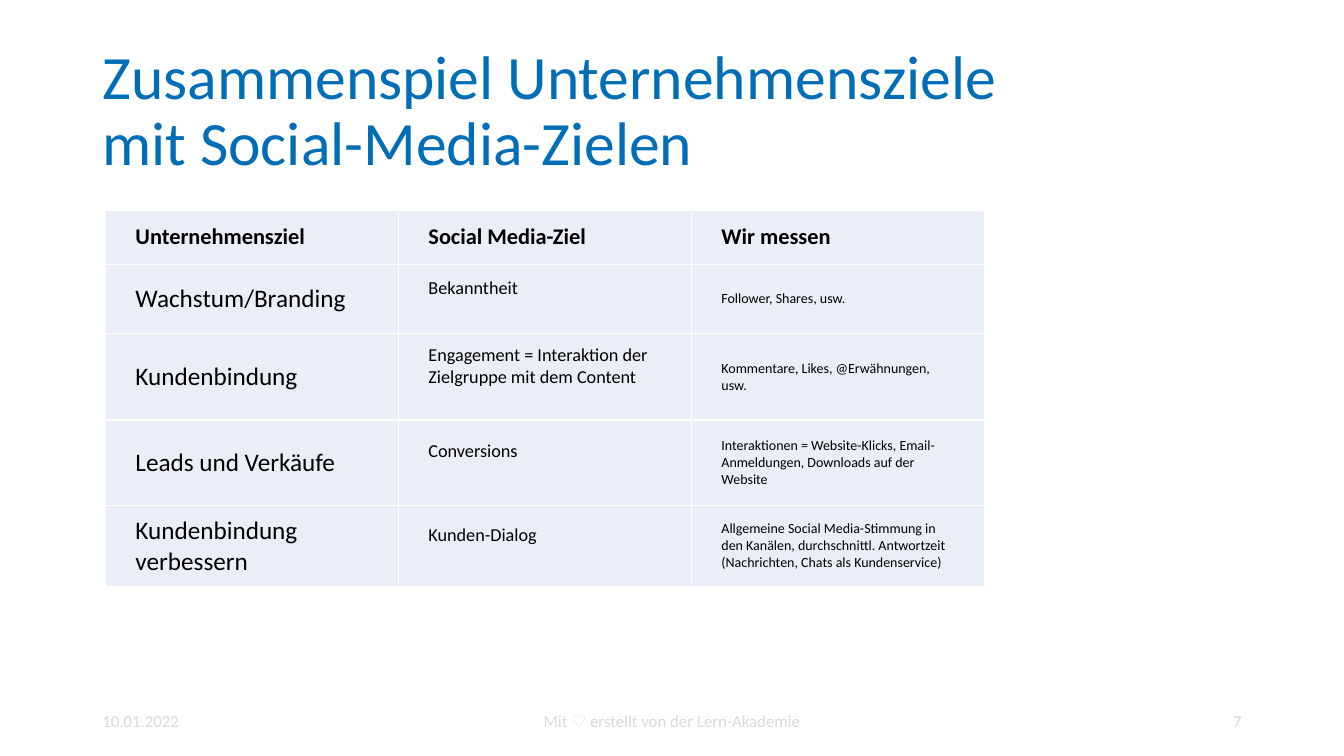
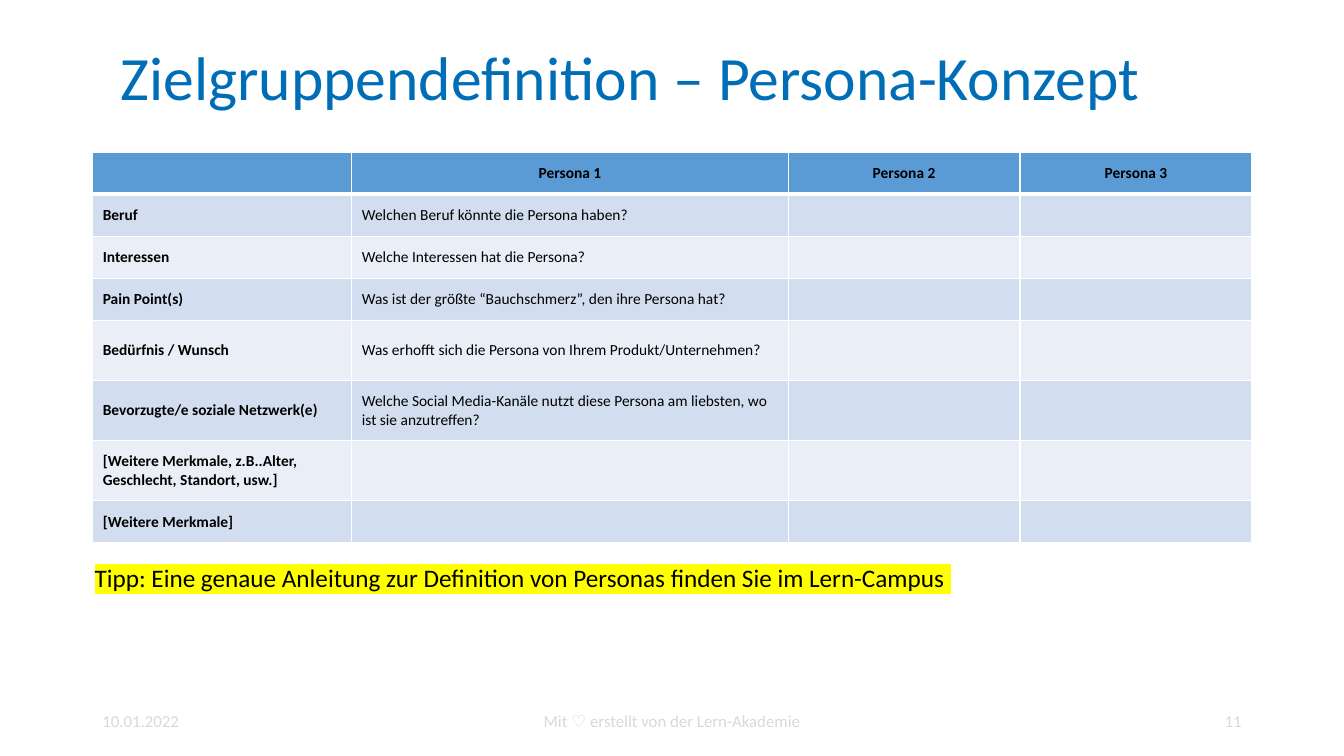
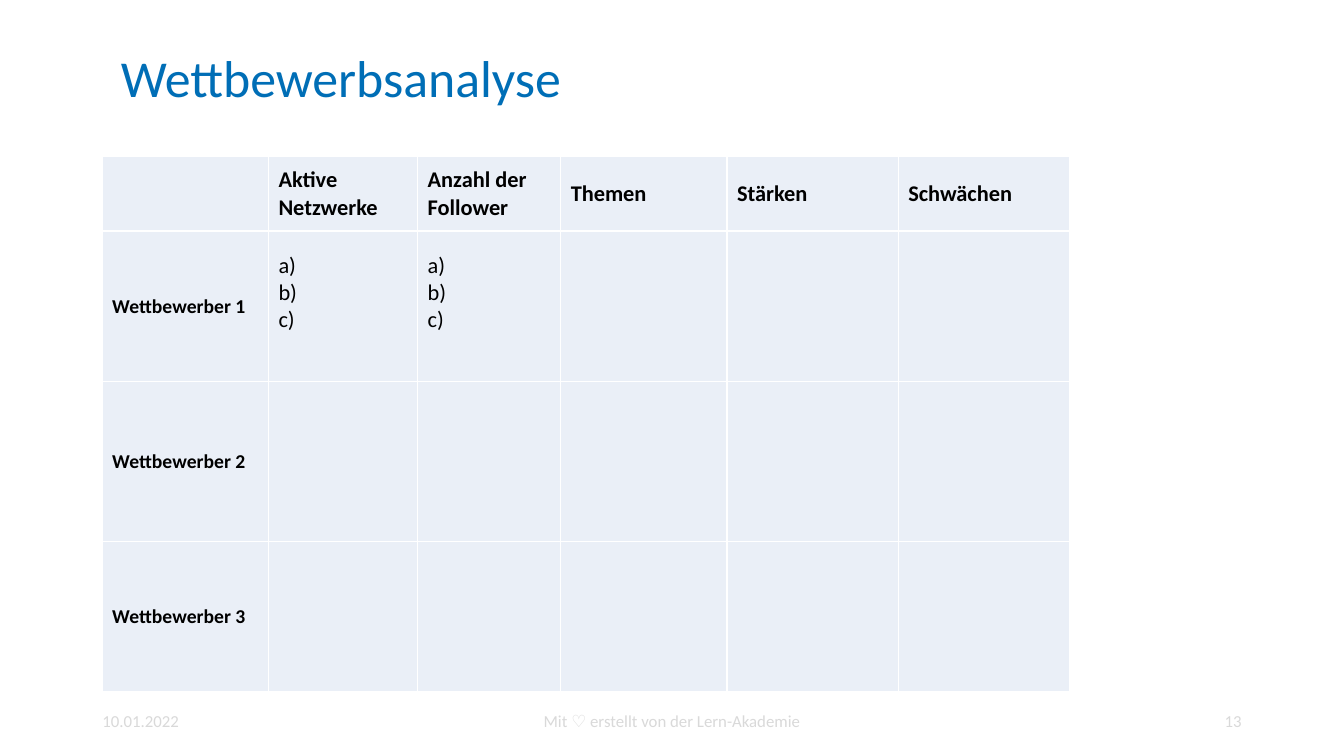
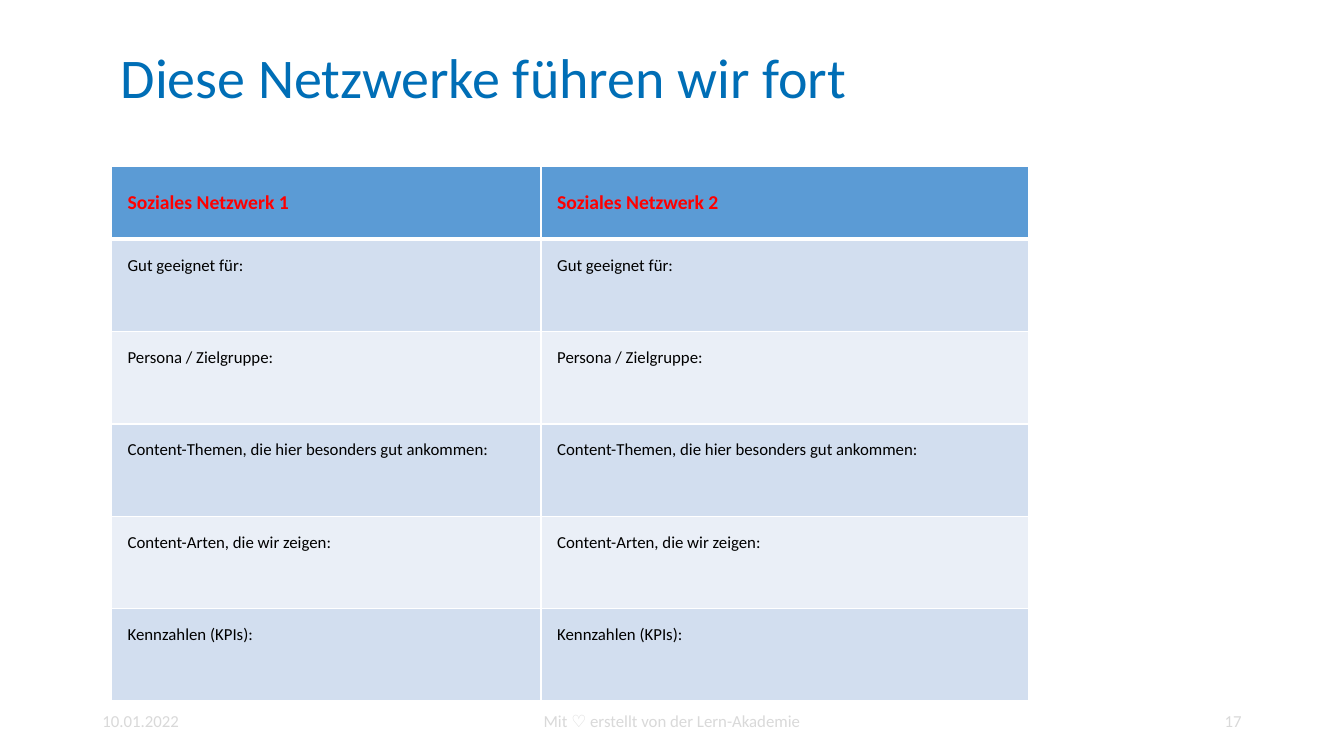
from dataclasses import dataclass, replace

from lxml.etree import SubElement
from pptx import Presentation
from pptx.dml.color import RGBColor
from pptx.enum.text import MSO_ANCHOR as Anchor, PP_ALIGN as Align
from pptx.oxml.ns import qn
from pptx.util import Emu, Inches, Pt

BLUE, HEAD, DARK, PALE = "006EB6", "5B9BD5", "D2DEEF", "EAEFF7"
BLACK, WHITE, GREY, RED, GOLD = "000000", "FFFFFF", "D9D9D9", "FF0000", "FFFF00"
FONT = "Calibri"


def paint(code):
    return RGBColor.from_string(code)


@dataclass
class Look:
    size: float
    bold: bool = False
    color: str = BLACK
    align: Align = Align.LEFT
    anchor: Anchor = Anchor.MIDDLE
    side: float = 0.1
    top: float = 0.1
    foot: float = 0.1
    lead: float = 1.0


class Deck:
    def __init__(self):
        self.file = Presentation()
        self.file.slide_width, self.file.slide_height = Inches(13.33), Inches(7.5)
        self.slide = None

    def box(self, at):
        wide, high = self.file.slide_width, self.file.slide_height
        return [Emu(int(part * full / 100)) for part, full in zip(at, (wide, high, wide, high))]

    def style(self, frame, look):
        for para in frame.paragraphs:
            para.alignment = look.align
            para.line_spacing = look.lead
            for run in para.runs:
                font = run.font
                font.name, font.size, font.bold = FONT, Pt(look.size), look.bold
                font.color.rgb = paint(look.color)

    def text(self, words, at, look):
        frame = self.slide.shapes.add_textbox(*self.box(at)).text_frame
        frame.word_wrap = True
        frame.vertical_anchor = look.anchor
        frame.text = words
        self.style(frame, look)
        return frame

    def page(self, title, number, size=44, at=(8.25, 2.53, 83.5, 16.27)):
        self.slide = self.file.slides.add_slide(self.file.slide_layouts[6])
        self.text(title, at, Look(size, color=BLUE, lead=0.9))
        feet = (
            ("10.01.2022", 6.88, 22.5, Align.LEFT),
            ("Mit ♡ erstellt von der Lern-Akademie", 33.13, 33.75, Align.CENTER),
            (str(number), 70.63, 22.5, Align.RIGHT),
        )
        for words, left, wide, align in feet:
            self.text(words, (left, 92.67, wide, 5.33), Look(12, color=GREY, align=align))

    def mark(self, frame, code):
        for run in frame.paragraphs[0].runs:
            props = run.font._element
            light = SubElement(props, qn("a:highlight"))
            SubElement(light, qn("a:srgbClr")).set("val", code)
            props.find(qn("a:solidFill")).addnext(light)

    def edge(self, cell, widths):
        props = cell._tc.get_or_add_tcPr()
        for side, width in zip("LRTB", widths):
            line = SubElement(props, qn(f"a:ln{side}"), w=str(Pt(width)))
            fill = SubElement(line, qn("a:solidFill"))
            SubElement(fill, qn("a:srgbClr")).set("val", WHITE)

    def table(self, at, cols, rows, cells, pick, band=False):
        left, top, wide, high = self.box(at)
        grid = self.slide.shapes.add_table(len(rows), len(cols), left, top, wide, high).table
        grid.first_row = grid.horz_banding = False
        for col, share in zip(grid.columns, cols):
            col.width = Emu(int(wide * share / sum(cols)))
        for row, share in zip(grid.rows, rows):
            row.height = Emu(int(high * share / sum(rows)))
        for r, line in enumerate(cells):
            tone = (HEAD if r == 0 else DARK if r % 2 else PALE) if band else PALE
            for c, words in enumerate(line):
                cell = grid.cell(r, c)
                self.edge(cell, (1, 1, 3 if band and r == 1 else 1, 3 if band and r == 0 else 1))
                cell.fill.solid()
                cell.fill.fore_color.rgb = paint(tone)
                if words:
                    self.fill(cell, words, pick(r, c))

    def fill(self, cell, words, look):
        cell.margin_left = cell.margin_right = Inches(look.side)
        cell.margin_top, cell.margin_bottom = Inches(look.top), Inches(look.foot)
        cell.vertical_anchor = look.anchor
        cell.text_frame.text = words
        self.style(cell.text_frame, look)


def goals(deck):
    deck.page("Zusammenspiel Unternehmensziele \vmit Social-Media-Zielen", 7,
              at=(6.88, 5.33, 86.25, 19.07))
    head = Look(16, bold=True, side=0.3)
    body = (Look(18, side=0.3), Look(13, side=0.3, foot=0.32), Look(10, side=0.3))
    cells = (
        ("Unternehmensziel", "Social Media-Ziel", "Wir messen"),
        ("Wachstum/Branding", "Bekanntheit", "Follower, Shares, usw."),
        ("Kundenbindung", "Engagement = Interaktion der Zielgruppe mit dem Content",
         "Kommentare, Likes, @Erwähnungen, usw."),
        ("Leads und Verkäufe", "Conversions",
         "Interaktionen = Website-Klicks, Email-Anmeldungen, Downloads auf der Website"),
        ("Kundenbindung verbessern", "Kunden-Dialog",
         "Allgemeine Social Media-Stimmung in den Kanälen, durchschnittl. Antwortzeit "
         "(Nachrichten, Chats als Kundenservice)"),
    )
    deck.table((7.83, 27.8, 65.4, 49.75), (1, 1, 1), (54, 69, 85, 85, 81), cells,
               lambda r, c: body[c] if r else head)


def persona(deck):
    deck.page("Zielgruppendefinition – Persona-Konzept", 11)
    plain = Look(11)
    bold = replace(plain, bold=True)
    head = replace(bold, align=Align.CENTER)
    pairs = (
        ("Beruf", "Welchen Beruf könnte die Persona haben?"),
        ("Interessen", "Welche Interessen hat die Persona?"),
        ("Pain Point(s)", "Was ist der größte “Bauchschmerz”, den ihre Persona hat?"),
        ("Bedürfnis / Wunsch", "Was erhofft sich die Persona von Ihrem Produkt/Unternehmen?"),
        ("Bevorzugte/e soziale Netzwerk(e)",
         "Welche Social Media-Kanäle nutzt diese Persona am liebsten, wo ist sie anzutreffen?"),
        ("[Weitere Merkmale, z.B..Alter, Geschlecht, Standort, usw.]", ""),
        ("[Weitere Merkmale]", ""),
    )
    cells = [("", "Persona 1", "Persona 2", "Persona 3")] + [(*pair, "", "") for pair in pairs]
    deck.table((6.9, 20.1, 86.25, 51.73), (257, 433, 230, 230), (7, 7, 7, 7, 10, 10, 10, 7), cells,
               lambda r, c: head if r == 0 else plain if c else bold, band=True)
    tip = deck.text("Tipp: Eine genaue Anleitung zur Definition von Personas finden Sie im Lern-Campus ",
                    (6.3, 73.73, 82.3, 5.33), Look(18, anchor=Anchor.TOP))
    deck.mark(tip, GOLD)


def rivals(deck):
    deck.page("Wettbewerbsanalyse", 13, 37)
    head, name = Look(16, bold=True), Look(14, bold=True)
    items = Look(16, foot=0.37)
    cells = [("", "Aktive Netzwerke", "Anzahl der Follower", "Themen", "Stärken", "Schwächen")]
    for n in range(1, 4):
        points = "a)\nb)\nc)" if n == 1 else ""
        cells.append((f"Wettbewerber {n}", points, points, "", "", ""))
    deck.table((7.6, 20.7, 72, 70.8), (165, 148, 142, 165, 170, 170), (74, 150, 159, 149), cells,
               lambda r, c: head if r == 0 else items if c else name)


def networks(deck):
    deck.page("Diese Netzwerke führen wir fort", 17, 40)
    head = Look(14, bold=True, color=RED, side=0.16)
    body = Look(12, anchor=Anchor.TOP, side=0.16, top=0.16)
    topics = ("Gut geeignet für:", "Persona / Zielgruppe:",
              "Content-Themen, die hier besonders gut ankommen:",
              "Content-Arten, die wir zeigen:", "Kennzahlen (KPIs):")
    cells = [("Soziales Netzwerk 1", "Soziales Netzwerk 2")] + [(topic, topic) for topic in topics]
    deck.table((8.3, 22.07, 68.2, 70.67), (426, 483), (72, 92, 92, 92, 92, 92), cells,
               lambda r, c: body if r else head, band=True)


def main():
    deck = Deck()
    for build in (goals, persona, rivals, networks):
        build(deck)
    deck.file.save("out.pptx")


if __name__ == "__main__":
    main()
